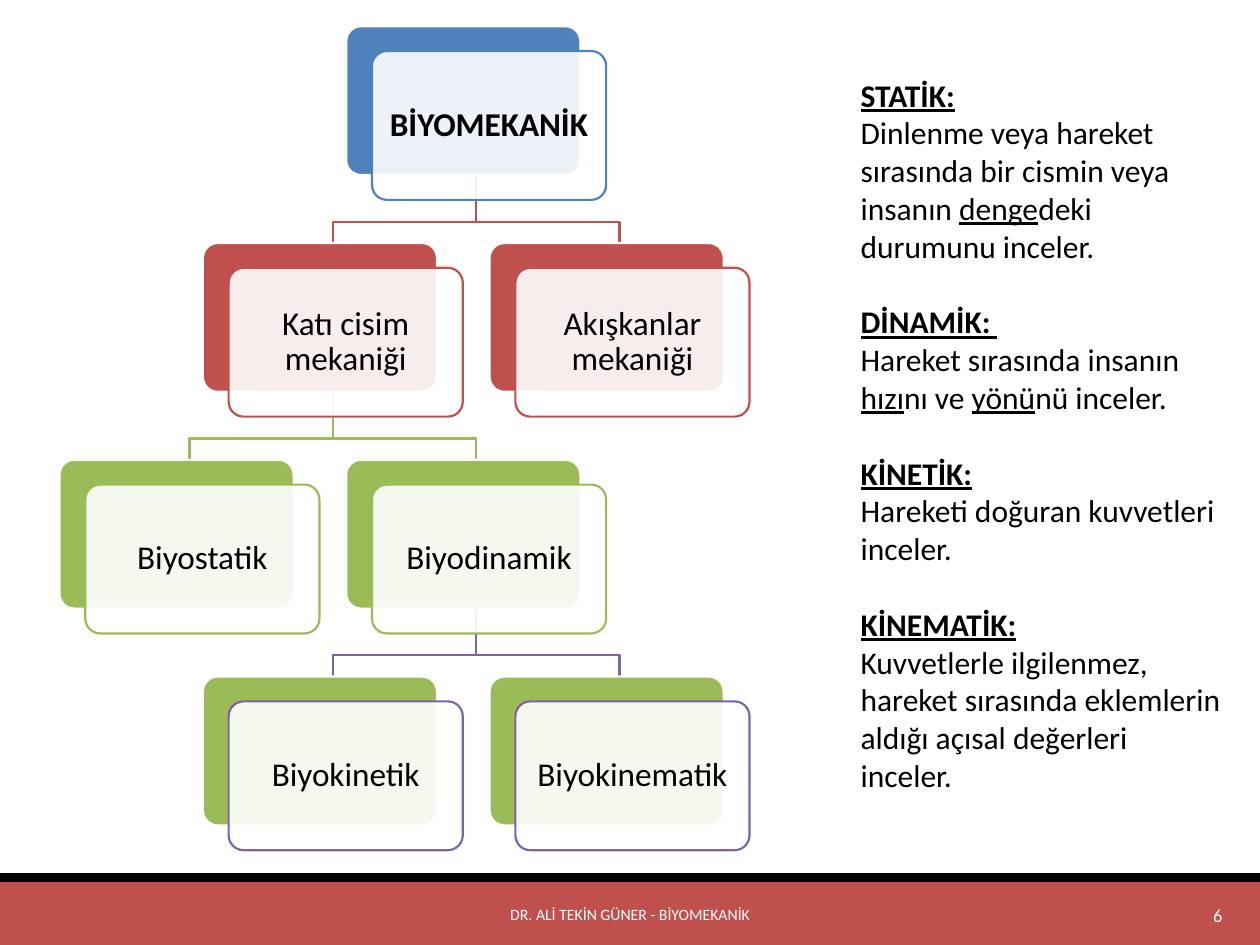
from lxml.etree import SubElement
from pptx import Presentation
from pptx.dml.color import RGBColor
from pptx.enum.shapes import MSO_SHAPE as Preset
from pptx.enum.text import MSO_ANCHOR as Anchor, PP_ALIGN as Align
from pptx.oxml.ns import qn
from pptx.util import Cm, Pt

BLUE, RED, GREEN, PURPLE = "4F81BD", "C0504D", "9BBB59", "8064A2"
BLACK, WHITE = "000000", "FFFFFF"

CARD_WIDTH, CARD_HEIGHT = 4.72, 3.0
COLUMN_STEP, ROW_STEP = 2.89, 4.37
FRONT_SHIFT_X, FRONT_SHIFT_Y = 0.52, 0.5
ELBOW_DROP = 0.94

NODES = {
    "BİYOMEKANİK": (2, 0, BLUE, BLUE),
    "Katı cisim mekaniği": (1, 1, RED, RED),
    "Akışkanlar mekaniği": (3, 1, RED, RED),
    "Biyostatik": (0, 2, GREEN, GREEN),
    "Biyodinamik": (2, 2, GREEN, GREEN),
    "Biyokinetik": (1, 3, GREEN, PURPLE),
    "Biyokinematik": (3, 3, GREEN, PURPLE),
}
BRANCHES = [
    ("BİYOMEKANİK", "Katı cisim mekaniği"),
    ("BİYOMEKANİK", "Akışkanlar mekaniği"),
    ("Katı cisim mekaniği", "Biyostatik"),
    ("Katı cisim mekaniği", "Biyodinamik"),
    ("Biyodinamik", "Biyokinetik"),
    ("Biyodinamik", "Biyokinematik"),
]
DEFINITIONS = [
    ("STATİK:", [
        ("Dinlenme veya hareket sırasında bir cismin veya insanın ", False),
        ("denge", True), ("deki durumunu inceler.", False)]),
    ("DİNAMİK: ", [
        ("Hareket sırasında insanın ", False), ("hızı", True),
        ("nı ve ", False), ("yönü", True), ("nü inceler.", False)]),
    ("KİNETİK:", [("Hareketi doğuran kuvvetleri inceler.", False)]),
    ("KİNEMATİK:", [
        ("Kuvvetlerle ilgilenmez, hareket sırasında eklemlerin aldığı "
         "açısal değerleri inceler.", False)]),
]


def color(hex_string):
    """Turn a hex string into a colour."""
    return RGBColor.from_string(hex_string)


def add_run(paragraph, text, size, hex_string=BLACK, bold=False, underline=False):
    """Append one formatted run to a paragraph."""
    run = paragraph.add_run()
    run.text = text
    font = run.font
    font.name, font.size = "Calibri", Pt(size)
    font.bold, font.underline = bold, underline
    font.color.rgb = color(hex_string)


def add_block(slide, preset, left, top, width, height, fill, line=None):
    """Add a flat preset shape with a solid fill and an optional outline."""
    shape = slide.shapes.add_shape(preset, Cm(left), Cm(top), Cm(width), Cm(height))
    shape.shadow.inherit = False
    shape.fill.solid()
    shape.fill.fore_color.rgb = color(fill)
    if line:
        shape.line.color.rgb = color(line)
        shape.line.width = Pt(1.25)
    else:
        shape.line.fill.background()
    return shape


def add_text_box(slide, left, top, width, height, anchor=Anchor.TOP):
    """Add a wrapping text box and return its text frame."""
    box = slide.shapes.add_textbox(Cm(left), Cm(top), Cm(width), Cm(height))
    frame = box.text_frame
    frame.word_wrap = True
    frame.vertical_anchor = anchor
    return frame


def add_branch(slide, start_x, start_y, end_x, end_y, line):
    """Draw an elbow line from a parent card down to a child card."""
    elbow_y = start_y + ELBOW_DROP
    builder = slide.shapes.build_freeform(Cm(start_x), Cm(start_y))
    corners = [(start_x, elbow_y), (end_x, elbow_y), (end_x, end_y)]
    builder.add_line_segments([(Cm(x), Cm(y)) for x, y in corners], close=False)
    shape = builder.convert_to_shape()
    shape.shadow.inherit = False
    shape.fill.background()
    shape.line.color.rgb = color(line)
    shape.line.width = Pt(1.25)


def add_card(slide, left, top, label, back_fill, front_line, bold):
    """Add a coloured card with a translucent labelled card over it."""
    back = add_block(slide, Preset.ROUNDED_RECTANGLE, left, top,
                     CARD_WIDTH, CARD_HEIGHT, back_fill, WHITE)
    front = add_block(slide, Preset.ROUNDED_RECTANGLE,
                      left + FRONT_SHIFT_X, top + FRONT_SHIFT_Y,
                      CARD_WIDTH, CARD_HEIGHT, WHITE, front_line)
    for card in (back, front):
        card.adjustments[0] = 0.1
    fill_color = front.fill._xPr.find(qn("a:solidFill"))[0]
    SubElement(fill_color, qn("a:alpha"), val="90000")
    frame = front.text_frame
    frame.word_wrap = True
    frame.vertical_anchor = Anchor.MIDDLE
    frame.margin_left = frame.margin_right = Cm(0.2)
    frame.margin_top = frame.margin_bottom = Cm(0.2)
    paragraph = frame.paragraphs[0]
    paragraph.alignment = Align.CENTER
    paragraph.line_spacing = 0.9
    add_run(paragraph, label, 19, bold=bold)


def add_tree(slide, left, top):
    """Lay out the branches and cards of the tree on a grid."""
    corners = {label: (left + column * COLUMN_STEP, top + row * ROW_STEP)
               for label, (column, row, _, _) in NODES.items()}
    middle = CARD_WIDTH / 2 + FRONT_SHIFT_X / 2
    for parent, child in BRANCHES:
        parent_x, parent_y = corners[parent]
        child_x, child_y = corners[child]
        add_branch(slide, parent_x + middle, parent_y + CARD_HEIGHT,
                   child_x + middle, child_y, NODES[child][3])
    for label, (_, row, back_fill, front_line) in NODES.items():
        add_card(slide, *corners[label], label, back_fill, front_line, row == 0)


def add_definitions(slide, left, top, width, height):
    """Write each term as a heading followed by its explanation."""
    frame = add_text_box(slide, left, top, width, height)
    for index, (term, pieces) in enumerate(DEFINITIONS):
        heading = frame.add_paragraph() if index else frame.paragraphs[0]
        if index:
            heading.space_before = Pt(21.6)
        add_run(heading, term, 18, bold=True, underline=True)
        explanation = frame.add_paragraph()
        for text, underline in pieces:
            add_run(explanation, text, 18, underline=underline)


def add_footer(slide, left, top, width, height):
    """Add the footer band with the author line and the page number."""
    add_block(slide, Preset.RECTANGLE, left, top, width, height, RED)
    add_block(slide, Preset.RECTANGLE, left, top - 0.18, width, 0.18, BLACK)
    entries = [
        ("DR. ALİ TEKİN GÜNER - BİYOMEKANİK", 9, 7.67, 10.06, Align.CENTER),
        ("6", 10.5, 20.62, 4.27, Align.RIGHT),
    ]
    for text, size, offset, text_width, alignment in entries:
        frame = add_text_box(slide, left + offset, top + 0.15, text_width, 1.02,
                             Anchor.MIDDLE)
        paragraph = frame.paragraphs[0]
        paragraph.alignment = alignment
        add_run(paragraph, text, size, WHITE)


def main():
    """Build the biomechanics slide and save it."""
    presentation = Presentation()
    presentation.slide_width, presentation.slide_height = Cm(25.4), Cm(19.05)
    slide = presentation.slides.add_slide(presentation.slide_layouts[6])
    add_footer(slide, 0, 17.78, 25.4, 1.27)
    add_tree(slide, 1.2, 0.53)
    add_definitions(slide, 17.1, 1.4, 7.82, 14.88)
    presentation.save("out.pptx")


if __name__ == "__main__":
    main()
